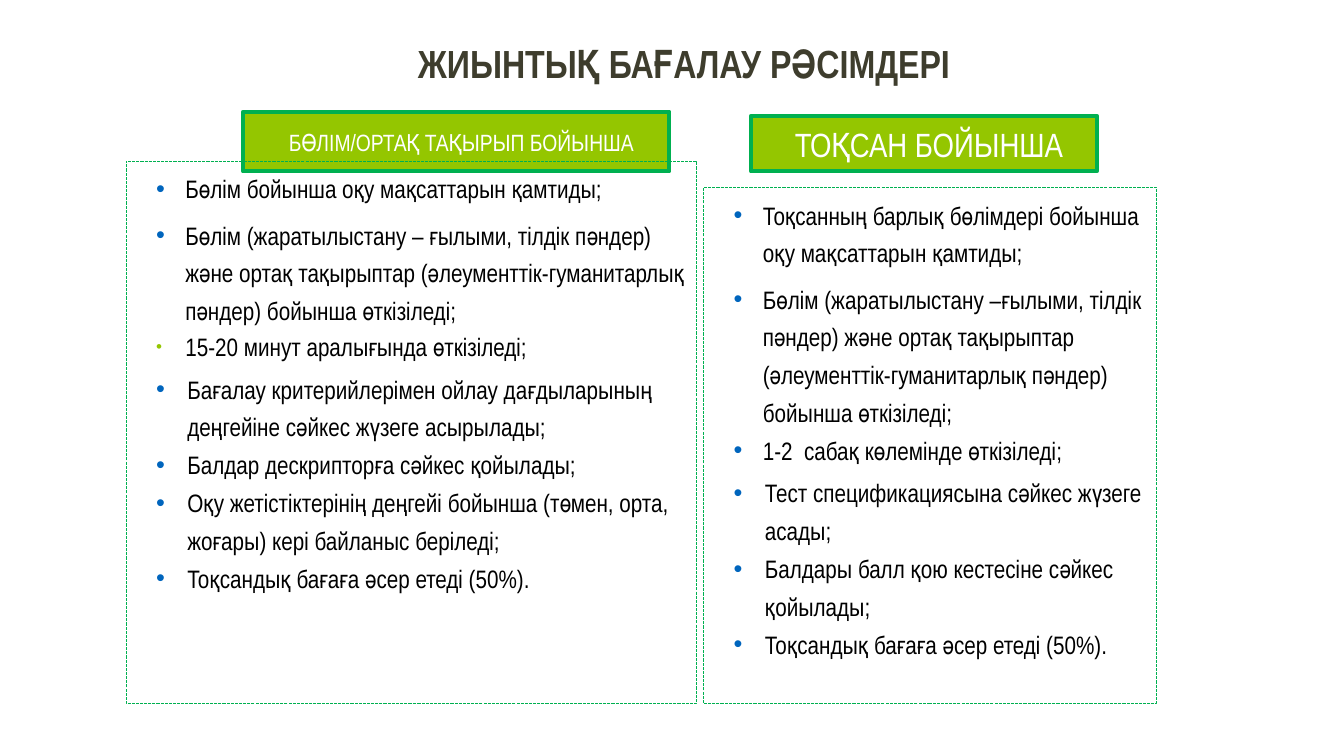
from dataclasses import dataclass, field

from lxml import etree
from pptx import Presentation
from pptx import util as u
from pptx.dml.color import RGBColor
from pptx.enum import dml, shapes, text
from pptx.oxml import ns


@dataclass(frozen=True)
class Theme:
    font: str = "Arial Narrow"
    title: str = "3E3D2D"
    body: str = "000000"
    badge_text: str = "FFFFFF"
    lime: str = "94C600"
    green: str = "00B050"
    bullet: str = "0065BD"
    title_size: float = 28
    body_size: float = 18
    badge_line: float = 3
    panel_line: float = 0.75


THEME = Theme()
WIDTH, HEIGHT = u.Inches(13.333), u.Inches(7.5)
BADGE_BOTTOM, PANEL_BOTTOM = 22.67, 93.07


@dataclass(frozen=True)
class Area:
    """A rectangle in percent of the slide's width and height."""
    left: float
    top: float
    width: float
    bottom: float

    def box(self) -> tuple[int, int, int, int]:
        return (int(WIDTH * self.left / 100), int(HEIGHT * self.top / 100),
                int(WIDTH * self.width / 100),
                int(HEIGHT * (self.bottom - self.top) / 100))


@dataclass(frozen=True)
class ItemStyle:
    margin: float = 0.49
    hanging: float = 0.29
    color: str = THEME.bullet
    bullet_percent: int = 100
    format: dict = field(default_factory=lambda: {"line_spacing": 1.25})


@dataclass(frozen=True)
class Column:
    badge: str
    badge_size: float
    badge_area: Area
    panel_area: Area
    items: list[tuple[str, ItemStyle]]


SCOPE = ItemStyle()
OPENING = ItemStyle(format={"line_spacing": 1.25, "space_after": u.Pt(6)})
DURATION = ItemStyle(color=THEME.lime, bullet_percent=68,
                     format={"space_before": u.Pt(4),
                             "alignment": text.PP_ALIGN.JUSTIFY})
RULE = ItemStyle(0.51, 0.31)
FIRST_RULE = ItemStyle(0.51, 0.31, format={"line_spacing": 1.25,
                                           "space_before": u.Pt(3.5)})

COLUMNS = [
    Column("БӨЛІМ/ОРТАҚ ТАҚЫРЫП БОЙЫНША", 16.8,
           Area(18.08, 14.8, 31.73, BADGE_BOTTOM),
           Area(9.38, 21.33, 42.45, PANEL_BOTTOM), [
               ("Бөлім бойынша оқу мақсаттарын қамтиды;", OPENING),
               ("Бөлім (жаратылыстану – ғылыми, тілдік пәндер) және ортақ "
                "тақырыптар (әлеументтік-гуманитарлық пәндер) бойынша "
                "өткізіледі;", SCOPE),
               ("15-20 минут аралығында өткізіледі;", DURATION),
               ("Бағалау критерийлерімен ойлау дағдыларының деңгейіне сәйкес "
                "жүзеге асырылады;", FIRST_RULE),
               ("Балдар дескрипторға сәйкес қойылады;", RULE),
               ("Оқу жетістіктерінің деңгейі бойынша (төмен, орта, жоғары) "
                "кері байланыс беріледі;", RULE),
               ("Тоқсандық бағаға әсер етеді (50%).", RULE)]),
    Column("ТОҚСАН БОЙЫНША", 24,
           Area(55.88, 15.33, 25.73, BADGE_BOTTOM),
           Area(52.35, 24.8, 33.68, PANEL_BOTTOM), [
               ("Тоқсанның барлық бөлімдері бойынша оқу мақсаттарын қамтиды;",
                OPENING),
               ("Бөлім (жаратылыстану –ғылыми, тілдік пәндер) және ортақ "
                "тақырыптар (әлеументтік-гуманитарлық пәндер) бойынша "
                "өткізіледі;", SCOPE),
               ("1-2  сабақ көлемінде өткізіледі;", SCOPE),
               ("Тест спецификациясына сәйкес жүзеге асады;", FIRST_RULE),
               ("Балдары балл қою кестесіне сәйкес қойылады;", RULE),
               ("Тоқсандық бағаға әсер етеді (50%).", RULE)]),
]


def apply_format(target, values: dict) -> None:
    for name, value in values.items():
        setattr(target, name, value)


def write(paragraph, words: str, size: float, color: str,
          bold: bool = False) -> None:
    run = paragraph.add_run()
    run.text = words
    apply_format(run.font, {"name": THEME.font, "size": u.Pt(size),
                            "bold": bold})
    run.font.color.rgb = RGBColor.from_string(color)


def add_bullet(paragraph, style: ItemStyle) -> None:
    properties = paragraph._p.get_or_add_pPr()
    properties.set("marL", str(u.Inches(style.margin)))
    properties.set("indent", str(-u.Inches(style.hanging)))
    color = etree.SubElement(properties, ns.qn("a:buClr"))
    etree.SubElement(color, ns.qn("a:srgbClr"), val=style.color)
    etree.SubElement(properties, ns.qn("a:buSzPct"),
                     val=str(style.bullet_percent * 1000))
    etree.SubElement(properties, ns.qn("a:buFont"), typeface="Arial")
    etree.SubElement(properties, ns.qn("a:buChar"), char="•")


def add_rectangle(slide, area: Area, line_width: float):
    shape = slide.shapes.add_shape(shapes.MSO_SHAPE.RECTANGLE, *area.box())
    shape.shadow.inherit = False
    shape.line.color.rgb = RGBColor.from_string(THEME.green)
    shape.line.width = u.Pt(line_width)
    return shape


def add_title(slide, words: str, area: Area) -> None:
    frame = slide.shapes.add_textbox(*area.box()).text_frame
    apply_format(frame, {"word_wrap": True,
                         "vertical_anchor": text.MSO_ANCHOR.MIDDLE})
    paragraph = frame.paragraphs[0]
    paragraph.alignment = text.PP_ALIGN.CENTER
    write(paragraph, words, THEME.title_size, THEME.title, bold=True)


def add_badge(slide, column: Column) -> None:
    shape = add_rectangle(slide, column.badge_area, THEME.badge_line)
    shape.fill.solid()
    shape.fill.fore_color.rgb = RGBColor.from_string(THEME.lime)
    apply_format(shape.text_frame, {
        "word_wrap": True, "margin_left": u.Inches(0.2),
        "vertical_anchor": text.MSO_ANCHOR.MIDDLE})
    paragraph = shape.text_frame.paragraphs[0]
    paragraph.alignment = text.PP_ALIGN.CENTER
    write(paragraph, column.badge, column.badge_size, THEME.badge_text)


def add_panel(slide, column: Column) -> None:
    shape = add_rectangle(slide, column.panel_area, THEME.panel_line)
    shape.fill.background()
    shape.line.dash_style = dml.MSO_LINE.SQUARE_DOT
    frame = shape.text_frame
    apply_format(frame, {"word_wrap": True,
                         "vertical_anchor": text.MSO_ANCHOR.TOP})
    for index, (words, style) in enumerate(column.items):
        paragraph = frame.add_paragraph() if index else frame.paragraphs[0]
        add_bullet(paragraph, style)
        apply_format(paragraph, {"alignment": text.PP_ALIGN.LEFT,
                                 **style.format})
        write(paragraph, words, THEME.body_size, THEME.body)


def main() -> None:
    presentation = Presentation()
    apply_format(presentation, {"slide_width": WIDTH, "slide_height": HEIGHT})
    slide = presentation.slides.add_slide(presentation.slide_layouts[6])
    add_title(slide, "ЖИЫНТЫҚ БАҒАЛАУ РӘСІМДЕРІ",
              Area(15.15, 2.8, 71.48, 13.87))
    for add_part in (add_badge, add_panel):
        for column in COLUMNS:
            add_part(slide, column)
    presentation.save("out.pptx")


if __name__ == "__main__":
    main()
